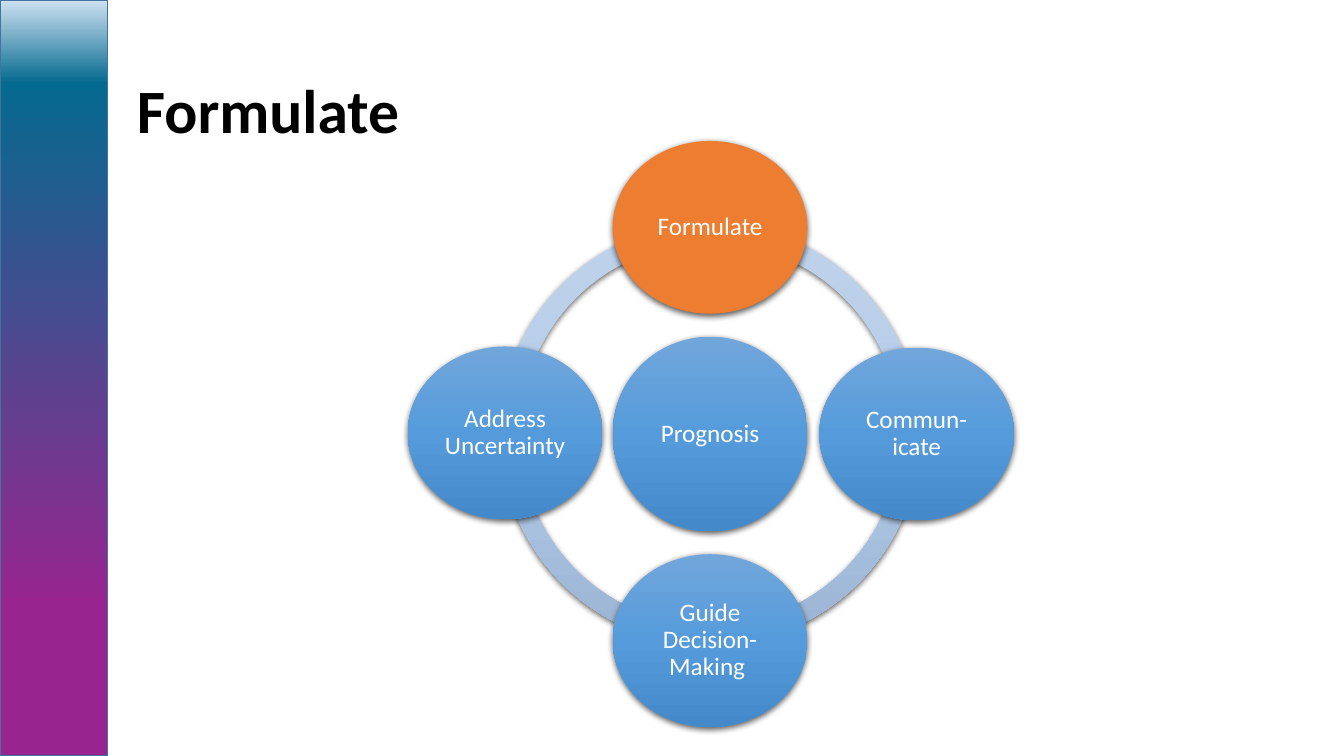
from copy import deepcopy

from lxml.etree import SubElement
from pptx import Presentation
from pptx.dml.color import RGBColor
from pptx.enum.shapes import MSO_SHAPE
from pptx.enum.text import MSO_ANCHOR, PP_ALIGN
from pptx.oxml.ns import qn
from pptx.util import Pt

BLACK = RGBColor(0x00, 0x00, 0x00)
WHITE = RGBColor(0xFF, 0xFF, 0xFF)
ORANGE = RGBColor(0xED, 0x7D, 0x31)
BAR_LINE = RGBColor(0x43, 0x73, 0x9E)
BAR_STOPS = [(0.20, RGBColor(0x98, 0x25, 0x8F)),
             (0.89, RGBColor(0x05, 0x6A, 0x8F)),
             (1.00, RGBColor(0xCE, 0xE1, 0xF2))]
RING_STOPS = [(0.0, RGBColor(0xC0, 0xD2, 0xEB)),
              (0.5, RGBColor(0xB3, 0xCB, 0xE9)),
              (1.0, RGBColor(0x9B, 0xB4, 0xD3))]
CIRCLE_STOPS = [(0.0, RGBColor(0x71, 0xA6, 0xDB)),
                (0.5, RGBColor(0x55, 0x9B, 0xDB)),
                (1.0, RGBColor(0x44, 0x8A, 0xCA))]


class CycleSlide:
    FONT = "Calibri"

    def __init__(self, slide):
        self.shapes = slide.shapes

    def preset(self, kind, left, top, width, height):
        shape = self.shapes.add_shape(kind, Pt(left), Pt(top), Pt(width), Pt(height))
        shape.shadow.inherit = False
        shape.line.fill.background()
        return shape

    def gradient(self, shape, stops, angle):
        shape.fill.gradient()
        shape.fill.gradient_angle = angle
        stop_list = next(shape._element.spPr.iter(qn("a:gsLst")))
        stop_list.append(deepcopy(stop_list[-1]))
        for stop, (position, color) in zip(shape.fill.gradient_stops, stops):
            stop.position = position
            stop.color.rgb = color

    def drop_shadow(self, shape):
        effects = shape._element.spPr.find(qn("a:effectLst"))
        outer = SubElement(effects, qn("a:outerShdw"), blurRad=str(Pt(4.5)),
                           dist=str(Pt(1.5)), dir="5400000", algn="ctr", rotWithShape="0")
        color = SubElement(outer, qn("a:srgbClr"), val=str(BLACK))
        SubElement(color, qn("a:alpha"), val="63000")

    def label(self, shape, text, size, color, align, bold=False):
        frame = shape.text_frame
        frame.word_wrap = True
        frame.vertical_anchor = MSO_ANCHOR.MIDDLE
        frame.text = text
        paragraph = frame.paragraphs[0]
        paragraph.alignment = align
        paragraph.line_spacing = 0.9
        font = paragraph.runs[0].font
        font.name, font.size, font.bold = self.FONT, Pt(size), bold
        font.color.rgb = color

    def side_bar(self, width, height):
        bar = self.preset(MSO_SHAPE.RECTANGLE, 0, 0, width, height)
        self.gradient(bar, BAR_STOPS, 90)
        bar.line.color.rgb = BAR_LINE
        bar.line.width = Pt(1)

    def title(self, text, left, top, width, height):
        box = self.shapes.add_textbox(Pt(left), Pt(top), Pt(width), Pt(height))
        self.label(box, text, 44, BLACK, PP_ALIGN.LEFT, bold=True)

    def ring_arc(self, center_x, center_y, size, start, end):
        arc = self.preset(MSO_SHAPE.BLOCK_ARC, center_x - size / 2,
                          center_y - size / 2, size, size)
        for index, value in enumerate((start, end, 0.046)):
            arc.adjustments[index] = value
        self.gradient(arc, RING_STOPS, 270)
        self.drop_shadow(arc)

    def circle(self, text, center_x, center_y, width, height, color=None):
        circle = self.preset(MSO_SHAPE.OVAL, center_x - width / 2,
                             center_y - height / 2, width, height)
        if color is None:
            self.gradient(circle, CIRCLE_STOPS, 270)
        else:
            circle.fill.solid()
            circle.fill.fore_color.rgb = color
        self.drop_shadow(circle)
        frame = circle.text_frame
        frame.margin_left = frame.margin_right = Pt(2)
        frame.margin_top = frame.margin_bottom = Pt(2)
        self.label(circle, text, 18, WHITE, PP_ALIGN.CENTER)


def main():
    presentation = Presentation()
    presentation.slide_width, presentation.slide_height = Pt(960), Pt(540)
    cycle = CycleSlide(presentation.slides.add_slide(presentation.slide_layouts[6]))

    # Side bar and title
    cycle.side_bar(77, 540)
    cycle.title("Formulate", 90.7, 28.8, 838, 104.4)

    # Ring in four quarters, the left half set slightly to the right
    hub_x, hub_y, quarter = 507.2, 310, 54
    for shift, start in ((0.8, 2), (0.8, 1), (-0.8, 0), (-0.8, 3)):
        cycle.ring_arc(hub_x + shift, hub_y, 301.7,
                       start * quarter, (start + 1) % 4 * quarter)

    # Hub and the four steps around it
    cycle.circle("Prognosis", hub_x, hub_y, 139, 139)
    radius = 147.6
    steps = [("Formulate", 0, -radius, ORANGE),
             ("Commun-icate", radius, 0, None),
             ("Guide Decision-Making ", 0, radius, None),
             ("Address Uncertainty", -146.4, -0.8, None)]
    for step, dx, dy, color in steps:
        cycle.circle(step, hub_x + dx, hub_y + dy, 139, 123.4, color)

    presentation.save("out.pptx")


if __name__ == "__main__":
    main()
